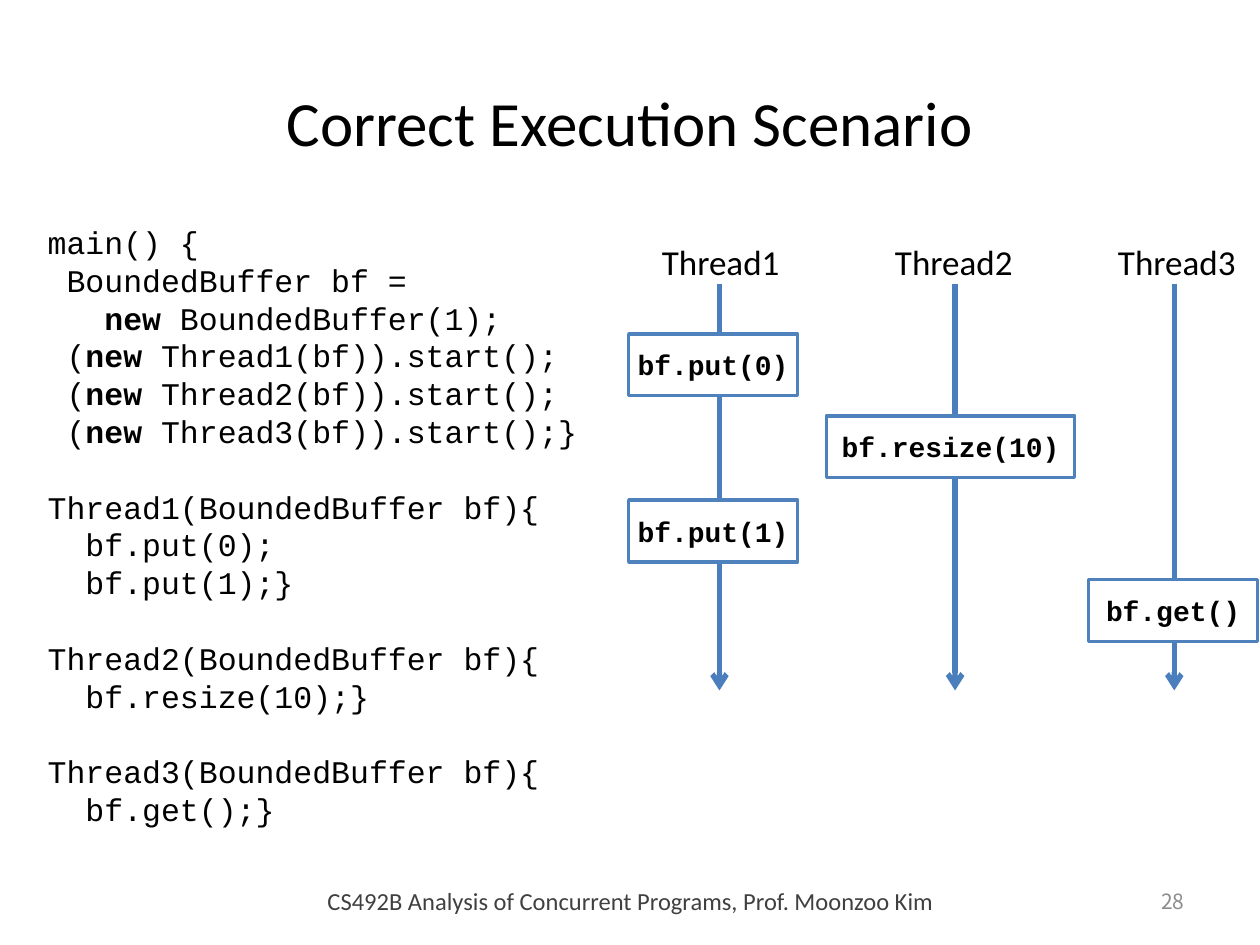
"""Build a slide that shows the correct execution scenario of three threads."""
from dataclasses import dataclass

from lxml import etree
from pptx import Presentation
from pptx.dml.color import RGBColor
from pptx.enum.shapes import MSO_CONNECTOR, MSO_SHAPE
from pptx.enum.text import MSO_ANCHOR, PP_ALIGN
from pptx.oxml.ns import qn
from pptx.util import Inches, Pt

LEFT, CENTER, RIGHT = PP_ALIGN.LEFT, PP_ALIGN.CENTER, PP_ALIGN.RIGHT
TOP, MIDDLE = MSO_ANCHOR.TOP, MSO_ANCHOR.MIDDLE
RECTANGLE, STRAIGHT = MSO_SHAPE.RECTANGLE, MSO_CONNECTOR.STRAIGHT
SANS, MONO, NUMBER_FONT = "Calibri", "Courier New", "Noto Sans CJK KR"
CODE_LINE = 21.6
CALL_HEIGHT = 0.49

CODE_BLOCKS = [
    ["main() {", " BoundedBuffer bf =", "   new BoundedBuffer(1);",
     " (new Thread1(bf)).start();", " (new Thread2(bf)).start();",
     " (new Thread3(bf)).start();}"],
    ["Thread1(BoundedBuffer bf){", "  bf.put(0);", "  bf.put(1);}"],
    ["Thread2(BoundedBuffer bf){", "  bf.resize(10);}"],
    ["Thread3(BoundedBuffer bf){", "  bf.get();}"],
]


@dataclass
class Call:
    text: str
    left: float
    top: float
    width: float = 1.34


@dataclass
class Thread:
    name: str
    label_left: float
    line_x: float
    calls: list[Call]


THREADS = [
    Thread("Thread1", 5.1, 5.71,
           [Call("bf.put(0)", 4.99, 2.65), Call("bf.put(1)", 4.99, 3.97)]),
    Thread("Thread2", 6.95, 7.58, [Call("bf.resize(10)", 6.56, 3.3, 1.97)]),
    Thread("Thread3", 8.72, 9.32, [Call("bf.get()", 8.64, 4.6)]),
]


def color(value: str) -> RGBColor:
    return RGBColor.from_string(value)


def write_text(paragraph, text: str, *, size: float, font: str = SANS,
               fill: str = "000000", bold: bool = False, align=LEFT) -> None:
    paragraph.alignment = align
    run = paragraph.add_run()
    run.text = text
    run.font.size = Pt(size)
    run.font.name = font
    run.font.bold = bold
    run.font.color.rgb = color(fill)


def set_frame(shape, anchor, side: float = 0.1):
    frame = shape.text_frame
    frame.word_wrap = True
    frame.vertical_anchor = anchor
    frame.margin_left = frame.margin_right = Inches(side)
    frame.margin_top = frame.margin_bottom = Inches(0.05)
    return frame


def add_text_box(slide, left: float, top: float, width: float, height: float,
                 anchor=TOP, side: float = 0.1):
    box = slide.shapes.add_textbox(
        Inches(left), Inches(top), Inches(width), Inches(height))
    return set_frame(box, anchor, side)


def add_title(slide, text: str) -> None:
    title = slide.shapes.title
    title.left, title.top = Inches(0.5), Inches(0.29)
    title.width, title.height = Inches(9), Inches(1.34)
    frame = set_frame(title, MIDDLE)
    write_text(frame.paragraphs[0], text, size=36, align=CENTER)


def add_code(slide) -> None:
    frame = add_text_box(slide, 0.28, 1.72, 4.88, 4.95)
    paragraph = frame.paragraphs[0]
    for block_index, block in enumerate(CODE_BLOCKS):
        for line_index, line in enumerate(block):
            if block_index or line_index:
                paragraph = frame.add_paragraph()
            paragraph.line_spacing = Pt(CODE_LINE)
            if block_index and line_index == 0:
                paragraph.space_before = Pt(CODE_LINE)
            for part in line.partition("new"):
                if part:
                    write_text(paragraph, part, size=18, font=MONO, bold=part == "new")


def add_timeline(slide, x: float) -> None:
    connector = slide.shapes.add_connector(
        STRAIGHT, Inches(x), Inches(2.25), Inches(x), Inches(5.48))
    connector.line.color.rgb = color("4B7EBC")
    connector.line.width = Pt(3)
    etree.SubElement(connector.line._get_or_add_ln(), qn("a:tailEnd"), type="arrow")
    etree.SubElement(connector._element.spPr, qn("a:effectLst"))


def add_call(slide, call: Call) -> None:
    shape = slide.shapes.add_shape(
        RECTANGLE, Inches(call.left), Inches(call.top),
        Inches(call.width), Inches(CALL_HEIGHT))
    shape.shadow.inherit = False
    shape.fill.solid()
    shape.fill.fore_color.rgb = color("FFFFFF")
    shape.line.color.rgb = color("4F81BD")
    shape.line.width = Pt(2)
    frame = set_frame(shape, MIDDLE, side=0.04)
    write_text(frame.paragraphs[0], call.text, size=16, font=MONO, bold=True,
               align=CENTER)


def add_thread(slide, thread: Thread) -> None:
    add_timeline(slide, thread.line_x)
    label = add_text_box(slide, thread.label_left, 1.86, 1.24, 0.44, side=0.04)
    write_text(label.paragraphs[0], thread.name, size=20, align=CENTER)
    for call in thread.calls:
        add_call(slide, call)


def add_footer(slide) -> None:
    number = add_text_box(slide, 8.46, 6.95, 1.04, 0.4, MIDDLE)
    write_text(number.paragraphs[0], "28", size=12, font=NUMBER_FONT,
               fill="8C8C8C", align=RIGHT)
    course = add_text_box(slide, 2.09, 6.95, 5.83, 0.4, MIDDLE)
    write_text(course.paragraphs[0],
               "CS492B Analysis of Concurrent Programs, Prof. Moonzoo Kim",
               size=14, fill="404040", align=CENTER)


def main() -> None:
    presentation = Presentation()
    presentation.slide_width, presentation.slide_height = Inches(10), Inches(7.5)
    slide = presentation.slides.add_slide(
        presentation.slide_layouts.get_by_name("Title Only"))
    add_title(slide, "Correct Execution Scenario")
    add_code(slide)
    for thread in THREADS:
        add_thread(slide, thread)
    add_footer(slide)
    presentation.save("out.pptx")


if __name__ == "__main__":
    main()
